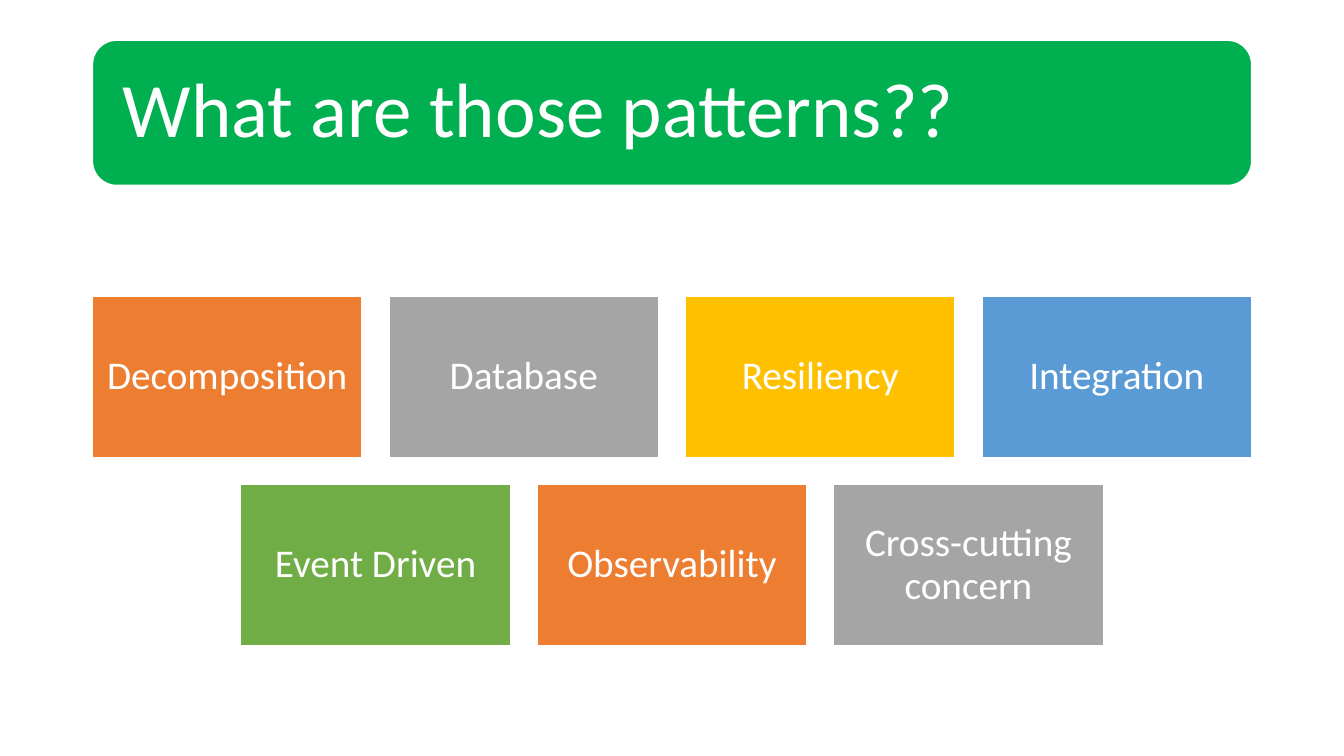
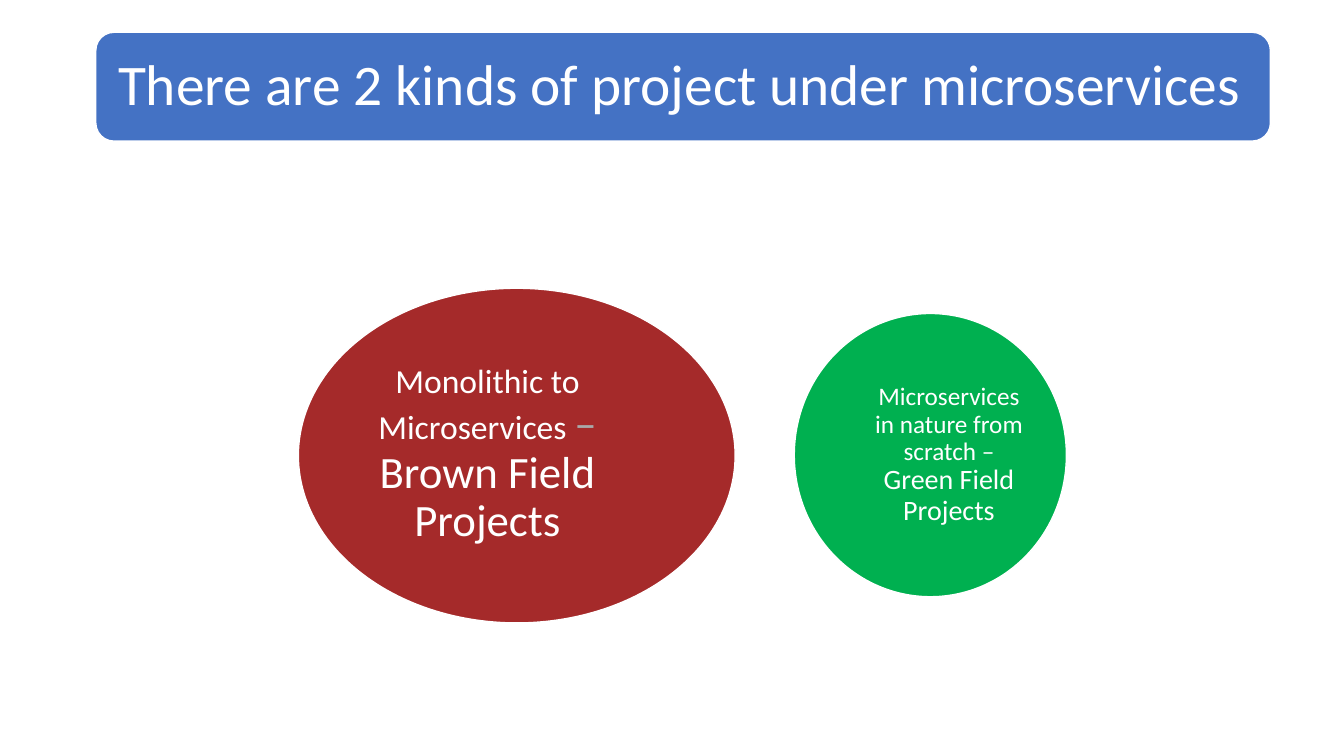
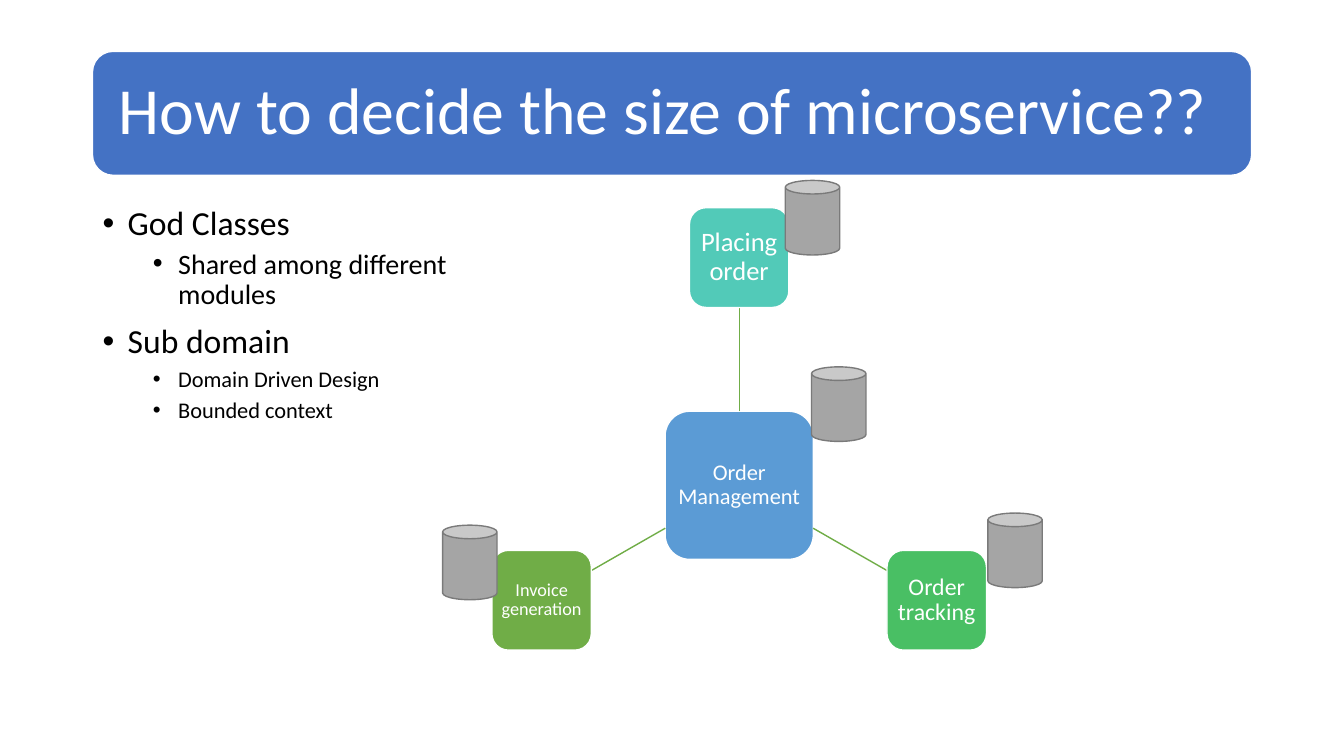
from dataclasses import dataclass

from lxml import etree
from pptx import Presentation
from pptx.dml.color import RGBColor
from pptx.enum.shapes import MSO_CONNECTOR, MSO_SHAPE
from pptx.enum.text import MSO_ANCHOR, MSO_AUTO_SIZE, PP_ALIGN
from pptx.oxml.ns import qn
from pptx.util import Inches, Pt

RECT, ROUND = MSO_SHAPE.RECTANGLE, MSO_SHAPE.ROUNDED_RECTANGLE
OVAL, CAN = MSO_SHAPE.OVAL, MSO_SHAPE.CAN
LEFT, CENTER = PP_ALIGN.LEFT, PP_ALIGN.CENTER
TOP, MIDDLE = MSO_ANCHOR.TOP, MSO_ANCHOR.MIDDLE
STRAIGHT, FIXED = MSO_CONNECTOR.STRAIGHT, MSO_AUTO_SIZE.NONE
BODY, BARE = 1, 5  # layouts of the template


@dataclass(frozen=True)
class Theme:
    font: str = "Calibri"
    white: str = "FFFFFF"
    black: str = "000000"
    blue: str = "4472C4"
    sky: str = "5B9BD5"
    green: str = "00B050"
    leaf: str = "70AD47"
    mint: str = "49BF64"
    teal: str = "52CAB8"
    orange: str = "ED7D31"
    gold: str = "FFC000"
    brown: str = "A52A2A"
    gray: str = "A5A5A5"
    edge: str = "7A7A7A"
    pale: str = "A9A9A9"
    line: float = 1
    tile: float = 28
    lead: float = 0.9


T = Theme()


def rgb(code):
    return RGBColor.from_string(code)


class Deck:
    """Holds the style and the current slide; places are on a 100 x 100 grid."""

    def __init__(self, theme):
        self.theme = theme
        self.prs = Presentation()
        self.prs.slide_width, self.prs.slide_height = Inches(13.33), Inches(7.5)

    def grid(self, *cells):
        """Turn alternating columns and rows into lengths."""
        sides = self.prs.slide_width, self.prs.slide_height
        return [round(c * sides[i % 2] / 100) for i, c in enumerate(cells)]

    def place(self, shape, box):
        shape.left, shape.top, shape.width, shape.height = self.grid(*box)

    def start(self, title, size, box, fill, inset, layout=BARE):
        """Add a slide with its title on a rounded band."""
        self.slide = self.prs.slides.add_slide(self.prs.slide_layouts[layout])
        head = self.slide.shapes.title
        self.place(head, box)
        band = self.shape(ROUND, box, fill)
        head.element.addprevious(band.element)
        self.frame(head, MIDDLE, (inset,) * 4)
        self.words(head.text_frame.paragraphs[0], [(title, size)], LEFT)

    def frame(self, shape, anchor, inset):
        """Set wrapping, anchor and insets: left, top, right, bottom."""
        frame = shape.text_frame
        frame.auto_size, frame.word_wrap = FIXED, True
        frame.vertical_anchor = anchor
        (frame.margin_left, frame.margin_top,
         frame.margin_right, frame.margin_bottom) = map(Inches, inset)

    def words(self, para, runs, align, color=None):
        """Fill a paragraph with runs of (text, size[, colour])."""
        para.alignment, para.line_spacing = align, self.theme.lead
        for text, size, *tint in runs:
            run = para.add_run()
            run.text = text
            font = run.font
            font.name, font.size = self.theme.font, Pt(size)
            font.color.rgb = rgb(tint[0] if tint else color or self.theme.white)

    def shape(self, kind, box, fill, edge=None):
        shape = self.slide.shapes.add_shape(kind, *self.grid(*box))
        shape.shadow.inherit = False
        shape.fill.solid()
        shape.fill.fore_color.rgb = rgb(fill)
        shape.line.color.rgb = rgb(edge or self.theme.white)
        shape.line.width = Pt(self.theme.line)
        return shape

    def label(self, kind, box, fill, runs, inset):
        shape = self.shape(kind, box, fill)
        self.frame(shape, MIDDLE, inset)
        self.words(shape.text_frame.paragraphs[0], runs, CENTER)

    def tiles(self, rows, left, top, high, gap):
        """Lay centred rows of tiles; the first row spans the margins."""
        count = len(rows[0])
        wide = (100 - 2 * left - gap * (count - 1)) / count
        drop = gap * self.prs.slide_width / self.prs.slide_height
        for r, row in enumerate(rows):
            x = 50 - (len(row) * (wide + gap) - gap) / 2
            for c, (text, fill) in enumerate(row):
                box = x + c * (wide + gap), top + r * (high + drop), wide, high
                self.label(RECT, box, fill, [(text, self.theme.tile)], (0.12,) * 4)

    def node(self, text, size, mid, span, fill):
        """Draw a rounded box of span (wide, high) around its centre."""
        box = mid[0] - span[0] / 2, mid[1] - span[1] / 2, *span
        self.label(ROUND, box, fill, [(text, size)], (0.04,) * 4)

    def link(self, start, end):
        line = self.slide.shapes.add_connector(STRAIGHT, *self.grid(*start, *end))
        line.line.color.rgb = rgb(self.theme.leaf)
        line.line.width = Pt(self.theme.line)
        etree.SubElement(line.element.spPr, qn("a:effectLst"))

    def bullets(self, items, box):
        """Fill the body with items of (level, text, size)."""
        body = self.slide.placeholders[1]
        self.place(body, box)
        self.frame(body, TOP, (0.1, 0.05, 0.1, 0.05))
        frame = body.text_frame
        for i, (level, text, size) in enumerate(items):
            para = frame.add_paragraph() if i else frame.paragraphs[0]
            para.level = level
            para.space_before = Pt(5 if level else 10)
            self.words(para, [(text, size)], LEFT, self.theme.black)
            props = para._p.get_or_add_pPr()
            props.set("marL", str(Inches(0.25 + 0.5 * level)))
            props.set("indent", str(Inches(-0.25)))
            etree.SubElement(props, qn("a:buFont")).set("typeface", "Arial")
            etree.SubElement(props, qn("a:buChar")).set("char", "•")


def patterns(deck):
    deck.start("What are those patterns??", 55, (6.88, 5.33, 86.25, 19.2),
               T.green, 0.3)
    deck.tiles([
        [("Decomposition", T.orange), ("Database", T.gray),
         ("Resiliency", T.gold), ("Integration", T.sky)],
        [("Event Driven", T.leaf), ("Observability", T.orange),
         ("Cross-cutting concern", T.gray)],
    ], left=6.88, top=39.2, high=21.33, gap=2)


def kinds(deck):
    deck.start("There are 2 kinds of project under microservices", 41,
               (7.13, 4.27, 87.4, 14.4), T.blue, 0.22)
    deck.label(OVAL, (22.2, 38.13, 32.5, 44.27), T.brown,
               [("Monolithic to Microservices ", 24), ("– ", 32, T.pale),
                ("Brown Field Projects", 32)], (0, 0, 0.58, 0))
    deck.label(OVAL, (59.1, 41.47, 20.25, 37.47), T.green,
               [("Microservices in nature from scratch – ", 18),
                ("Green Field Projects", 20)], (0.37, 0, 0, 0))


def sizing(deck):
    deck.start("How to decide the size of microservice??", 47,
               (6.88, 6.8, 86.25, 16.4), T.blue, 0.26, BODY)
    deck.bullets([
        (0, "God Classes", 24),
        (1, "Shared among different modules", 20),
        (0, "Sub domain", 24),
        (1, "Domain Driven Design", 16),
        (1, "Bounded context", 16),
    ], (6.88, 26.67, 32.63, 63.47))

    axis, reach, low = 55, 14.7, 79.4
    small = 7.4, 13.2
    deck.node("Order Management", 16, (axis, 64.2), (11.03, 19.6), T.sky)
    deck.link((axis, 54.4), (axis, 40.67))
    for side in (1, -1):
        deck.link((axis + side * 5.5, 69.87), (axis + side * 11, 75.47))
    for text, size, mid, fill in [
        ("Placing order", 19, (axis, 34.07), T.teal),
        ("Order tracking", 17, (axis + reach, low), T.mint),
        ("Invoice generation", 13, (axis - reach, low), T.leaf),
    ]:
        deck.node(text, size, mid, small, fill)
    for spot in [(60.38, 48.53), (73.5, 67.87), (58.43, 23.87), (32.93, 69.47)]:
        deck.shape(CAN, (*spot, 4.05, 9.87), T.gray, T.edge)


def main():
    deck = Deck(T)
    for build in (patterns, kinds, sizing):
        build(deck)
    deck.prs.save("out.pptx")


if __name__ == "__main__":
    main()
